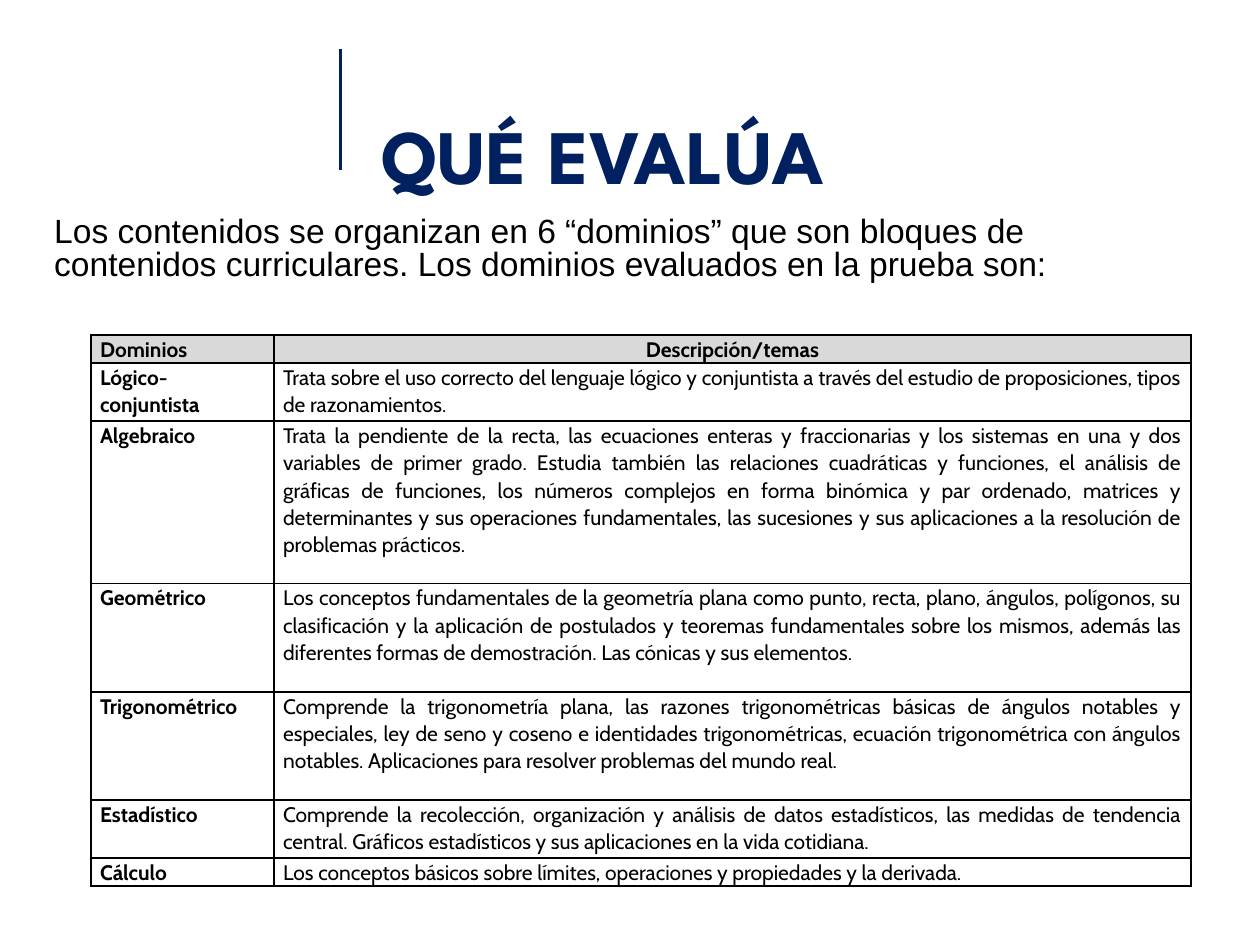
from lxml.etree import SubElement
from pptx import Presentation
from pptx.dml.color import RGBColor
from pptx.enum.shapes import MSO_CONNECTOR
from pptx.enum.text import MSO_ANCHOR, MSO_AUTO_SIZE, PP_ALIGN
from pptx.oxml.ns import qn
from pptx.util import Pt

NAVY, BLACK, GREY = "002060", "000000", "D9D9D9"
HEADINGS = ("Dominios", "Descripción/temas")
DOMAINS = [
    ("Lógico- conjuntista",
     "Trata sobre el uso correcto del lenguaje lógico y conjuntista a través del estudio de "
     "proposiciones, tipos de razonamientos."),
    ("Algebraico",
     "Trata la pendiente de la recta, las ecuaciones enteras y fraccionarias y los sistemas en una "
     "y dos variables de primer grado. Estudia también las relaciones cuadráticas y funciones, el "
     "análisis de gráficas de funciones, los números complejos en forma binómica y par ordenado, "
     "matrices y determinantes y sus operaciones fundamentales, las sucesiones y sus aplicaciones "
     "a la resolución de problemas prácticos."),
    ("Geométrico",
     "Los conceptos fundamentales de la geometría plana como punto, recta, plano, ángulos, "
     "polígonos, su clasificación y la aplicación de postulados y teoremas fundamentales sobre los "
     "mismos, además las diferentes formas de demostración. Las cónicas y sus elementos."),
    ("Trigonométrico",
     "Comprende la trigonometría plana, las razones trigonométricas básicas de ángulos notables y "
     "especiales, ley de seno y coseno e identidades trigonométricas, ecuación trigonométrica con "
     "ángulos notables. Aplicaciones para resolver problemas del mundo real."),
    ("Estadístico",
     "Comprende la recolección, organización y análisis de datos estadísticos, las medidas de "
     "tendencia central. Gráficos estadísticos y sus aplicaciones en la vida cotidiana."),
    ("Cálculo",
     "Los conceptos básicos sobre límites, operaciones y propiedades y la derivada."),
]
ROW_HEIGHTS = (16, 33.1, 92.9, 61.9, 61.9, 33.1, 16)
FIRST_COLUMN = 104.6


def colour(value):
    return RGBColor.from_string(value)


def format_text(para, font, size, fill, bold=False):
    for span in para.runs:
        span.font.name = font
        span.font.size = Pt(size)
        span.font.bold = bold
        span.font.color.rgb = colour(fill)


def set_margins(target, left, top, right, bottom):
    target.margin_left, target.margin_top = Pt(left), Pt(top)
    target.margin_right, target.margin_bottom = Pt(right), Pt(bottom)


def add_title(slide, left, top, width, height):
    """Place the title with the vertical rule on its left."""
    title = slide.shapes.title
    title.left, title.top, title.width, title.height = Pt(left), Pt(top), Pt(width), Pt(height)
    frame = title.text_frame
    frame.text = "QUÉ EVALÚA"
    frame.word_wrap = True
    frame.auto_size = MSO_AUTO_SIZE.NONE
    frame.vertical_anchor = MSO_ANCHOR.BOTTOM
    set_margins(frame, 7.2, 3.6, 7.2, 3.6)
    para = frame.paragraphs[0]
    para.alignment = PP_ALIGN.LEFT
    format_text(para, "League Spartan", 44, NAVY, bold=True)

    rule_x = Pt(left - 16.5)
    rule = slide.shapes.add_connector(
        MSO_CONNECTOR.STRAIGHT, rule_x, Pt(top), rule_x, Pt(top + 69))
    rule.line.color.rgb = colour(NAVY)
    rule.line.width = Pt(2)
    SubElement(rule._element.spPr, qn("a:effectLst"))


def add_intro(slide, left, top, width, height):
    box = slide.shapes.add_textbox(Pt(left), Pt(top), Pt(width), Pt(height))
    frame = box.text_frame
    frame.word_wrap = True
    set_margins(frame, 9.4, 21, 3.6, 3.6)
    para = frame.paragraphs[0]
    para.text = ("Los contenidos se organizan en 6 “dominios” que son bloques de contenidos "
                 "curriculares. Los dominios evaluados en la prueba son:")
    para.line_spacing = 0.8
    format_text(para, "Arial", 19.2, BLACK)


def add_borders(cell):
    properties = cell._tc.get_or_add_tcPr()
    for side in ("lnL", "lnR", "lnT", "lnB"):
        border = SubElement(properties, qn(f"a:{side}"), w=str(Pt(1)))
        fill = SubElement(border, qn("a:solidFill"))
        SubElement(fill, qn("a:srgbClr"), val=BLACK)


def fill_cell(cell, text, bold, align, shade):
    add_borders(cell)
    if shade:
        cell.fill.solid()
        cell.fill.fore_color.rgb = colour(shade)
    else:
        cell.fill.background()
    set_margins(cell, 5.2, 0, 5.2, 0)
    para = cell.text_frame.paragraphs[0]
    para.text = text
    para.alignment = align
    para.line_spacing = 1.07
    format_text(para, "Cabin", 12, BLACK, bold)


def add_domain_table(slide, left, top, width):
    rows = [HEADINGS, *DOMAINS]
    table = slide.shapes.add_table(
        len(rows), 2, Pt(left), Pt(top), Pt(width), Pt(sum(ROW_HEIGHTS))).table
    table.columns[0].width = Pt(FIRST_COLUMN)
    table.columns[1].width = Pt(width - FIRST_COLUMN)
    for r, (texts, height) in enumerate(zip(rows, ROW_HEIGHTS)):
        table.rows[r].height = Pt(height)
        for c, text in enumerate(texts):
            heading = r == 0
            align = PP_ALIGN.CENTER if heading and c == 1 else PP_ALIGN.JUSTIFY
            fill_cell(table.cell(r, c), text, heading or c == 0, align, GREY if heading else None)


def main():
    deck = Presentation()
    deck.slide_width, deck.slide_height = Pt(720), Pt(540)
    slide = deck.slides.add_slide(deck.slide_layouts[5])
    add_title(slide, 211, 28, 453, 90)
    add_intro(slide, 21.6, 103.7, 659.5, 67.7)
    add_domain_table(slide, 52, 191.5, 628.6)
    deck.save("out.pptx")


if __name__ == "__main__":
    main()
